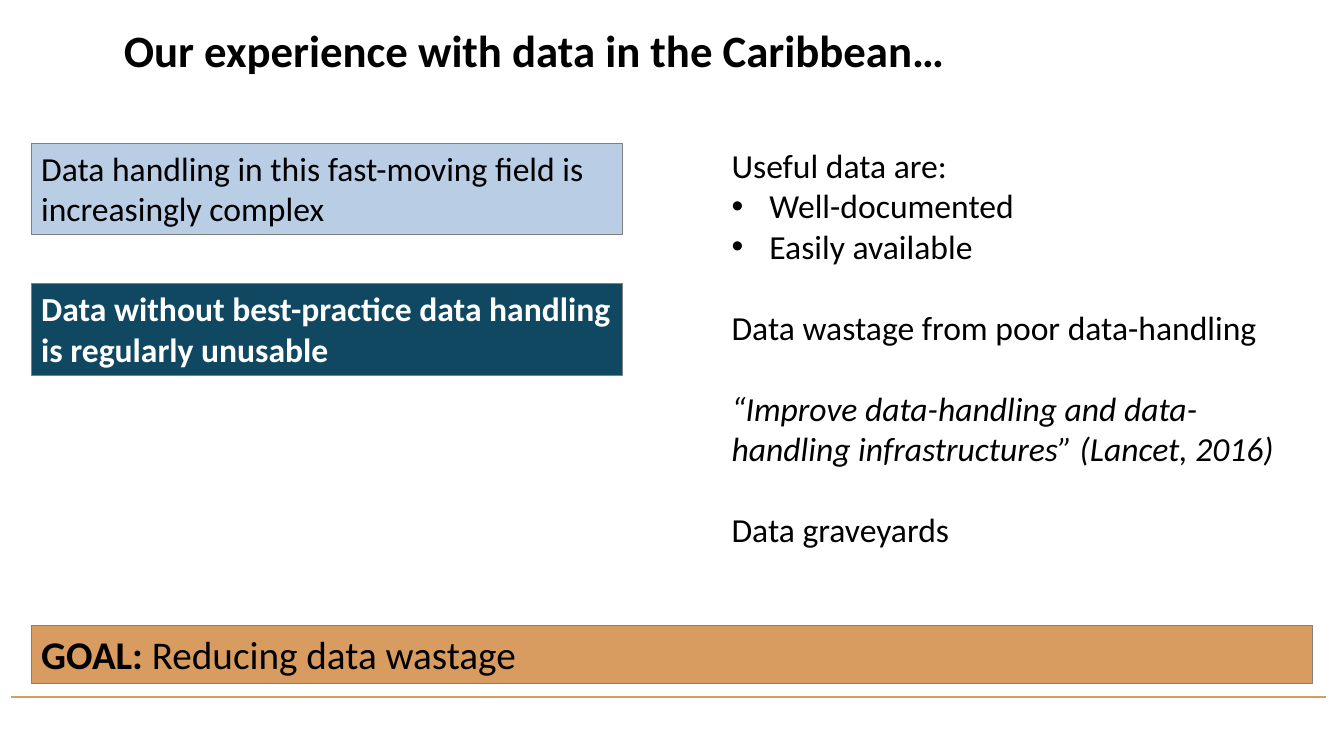
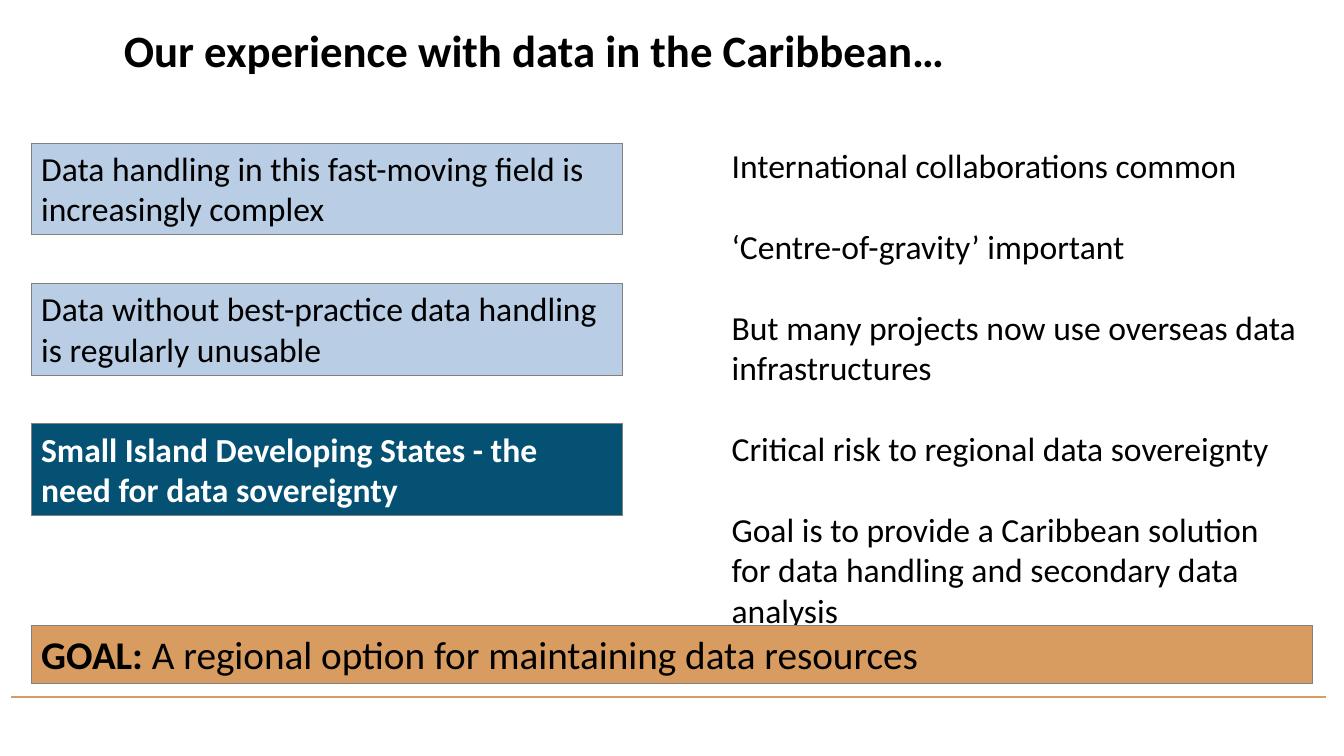
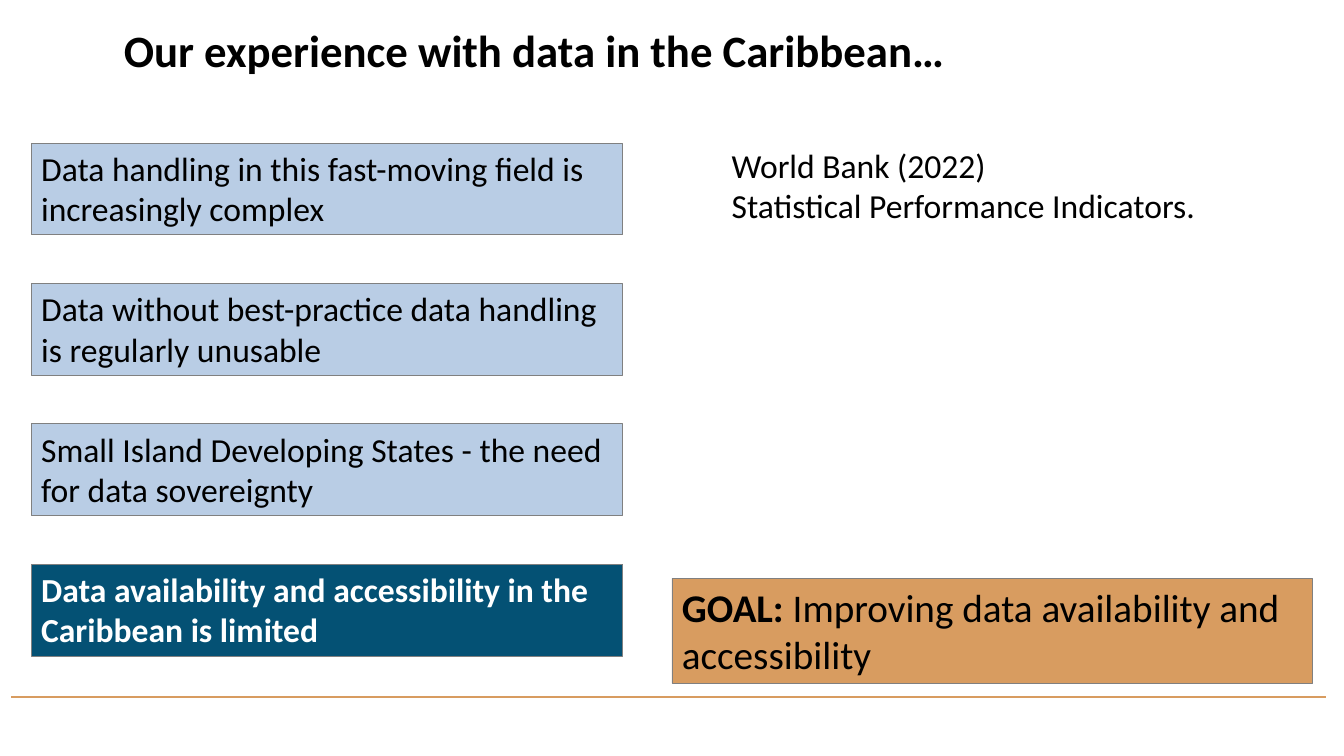
from lxml.etree import SubElement
from pptx import Presentation
from pptx.dml.color import RGBColor
from pptx.enum.shapes import MSO_CONNECTOR as CONN, MSO_SHAPE as SHAPE
from pptx.enum.text import MSO_ANCHOR as ANCHOR, PP_ALIGN as ALIGN
from pptx.oxml.ns import qn
from pptx.util import Pt

FONT = "Calibri"
BLACK, WHITE, GREY = "000000", "FFFFFF", "808080"
PALE, TEAL, NAVY, TAN = "B9CDE5", "045174", "104862", "D89C60"
TITLE = "Our experience with data in the Caribbean…"
STATEMENTS = [
    "Data handling in this fast-moving field is increasingly complex",
    "Data without best-practice data handling is regularly unusable",
    "Small Island Developing States - the need for data sovereignty",
    "Data availability and accessibility in the Caribbean is limited",
]
TITLE_BOX = (81.4, 13, 762, 46)
POINTS_BOX = (515.5, 100, 422.6, 298)
STATEMENT_BOX = (22.3, 102.2, 422.6, 65.6)
STATEMENT_STEP = 100.25
WIDE_GOAL_BOX = (22.3, 447, 915.2, 41.2)
HALF_GOAL_BOX = (480, 413.2, 457.5, 75)
RULE = (7.9, 498, 946.8, 498)
GAP = {"before": 29}
BULLET = {"bullet": True}


def rgb(hex_color):
    """Turn a hex string into a colour."""
    return RGBColor.from_string(hex_color)


def add_text(p, text, size=24, color=BLACK, bold=False, italic=False, before=0, bullet=False):
    """Add one formatted run to a paragraph."""
    p.alignment = ALIGN.LEFT
    if before:
        p.space_before = Pt(before)
    if bullet:
        pPr = p._p.get_or_add_pPr()
        pPr.set("marL", str(Pt(27)))
        pPr.set("indent", str(-Pt(27)))
        SubElement(pPr, qn("a:buFont"), typeface="Arial")
        SubElement(pPr, qn("a:buChar"), char="•")
    r = p.add_run()
    r.text = text
    font = r.font
    font.name, font.size, font.bold, font.italic = FONT, Pt(size), bold, italic
    font.color.rgb = rgb(color)


def add_box(s, box, fill=None):
    """Add a text box, or an outlined rectangle when a fill is given, and return its frame."""
    place = [Pt(v) for v in box]
    if fill:
        sp = s.shapes.add_shape(SHAPE.RECTANGLE, *place)
        sp.shadow.inherit = False
        sp.fill.solid()
        sp.fill.fore_color.rgb = rgb(fill)
        sp.line.color.rgb = rgb(GREY)
        sp.line.width = Pt(0.5)
    else:
        sp = s.shapes.add_textbox(*place)
    tf = sp.text_frame
    tf.word_wrap = True
    tf.vertical_anchor = ANCHOR.TOP
    return tf


def add_rule(s):
    """Draw the footer rule."""
    line = s.shapes.add_connector(CONN.STRAIGHT, *[Pt(v) for v in RULE])
    line.line.color.rgb = rgb(TAN)
    line.line.width = Pt(1.5)
    SubElement(line._element.spPr, qn("a:effectLst"))


def add_points(s, box, points):
    """Write the right-hand column, one paragraph per point."""
    tf = add_box(s, box)
    for i, (text, style) in enumerate(points):
        p = tf.add_paragraph() if i else tf.paragraphs[0]
        add_text(p, text, **style)


def add_statements(s, box, count, accent):
    """Stack the first statements and highlight the last of them."""
    left, top, width, height = box
    for i, text in enumerate(STATEMENTS[:count]):
        current = i == count - 1
        tf = add_box(s, (left, top + i * STATEMENT_STEP, width, height), accent if current else PALE)
        add_text(tf.paragraphs[0], text, color=WHITE if current else BLACK, bold=current)


def add_goal(s, box, goal):
    """Add the goal band with its bold lead-in."""
    p = add_box(s, box, TAN).paragraphs[0]
    add_text(p, "GOAL: ", size=28, bold=True)
    add_text(p, goal, size=28)


def add_experience_slide(prs, count, points, goal, goal_box=WIDE_GOAL_BOX, accent=TEAL):
    """Build one slide of the series."""
    s = prs.slides.add_slide(prs.slide_layouts[6])
    add_rule(s)
    add_points(s, POINTS_BOX, points)
    add_statements(s, STATEMENT_BOX, count, accent)
    add_text(add_box(s, TITLE_BOX).paragraphs[0], TITLE, size=32, bold=True)
    add_goal(s, goal_box, goal)


def main():
    """Build and save the presentation."""
    prs = Presentation()
    prs.slide_width, prs.slide_height = Pt(960), Pt(540)
    add_experience_slide(prs, 2, [
        ("Useful data are:", {}),
        ("Well-documented", BULLET),
        ("Easily available", BULLET),
        ("Data wastage from poor data-handling", GAP),
        ("“Improve data-handling and data-handling infrastructures” (Lancet, 2016)",
         {**GAP, "italic": True}),
        ("Data graveyards", GAP),
    ], "Reducing data wastage", accent=NAVY)
    add_experience_slide(prs, 3, [
        ("International collaborations common", {}),
        ("‘Centre-of-gravity’ important", GAP),
        ("But many projects now use overseas data infrastructures", GAP),
        ("Critical risk to regional data sovereignty", GAP),
        ("Goal is to provide a Caribbean solution for data handling and secondary data analysis", GAP),
    ], "A regional option for maintaining data resources")
    add_experience_slide(prs, 4, [
        ("World Bank (2022)", {}),
        ("Statistical Performance Indicators.", {}),
    ], "Improving data availability and accessibility", goal_box=HALF_GOAL_BOX)
    prs.save("out.pptx")


if __name__ == "__main__":
    main()
